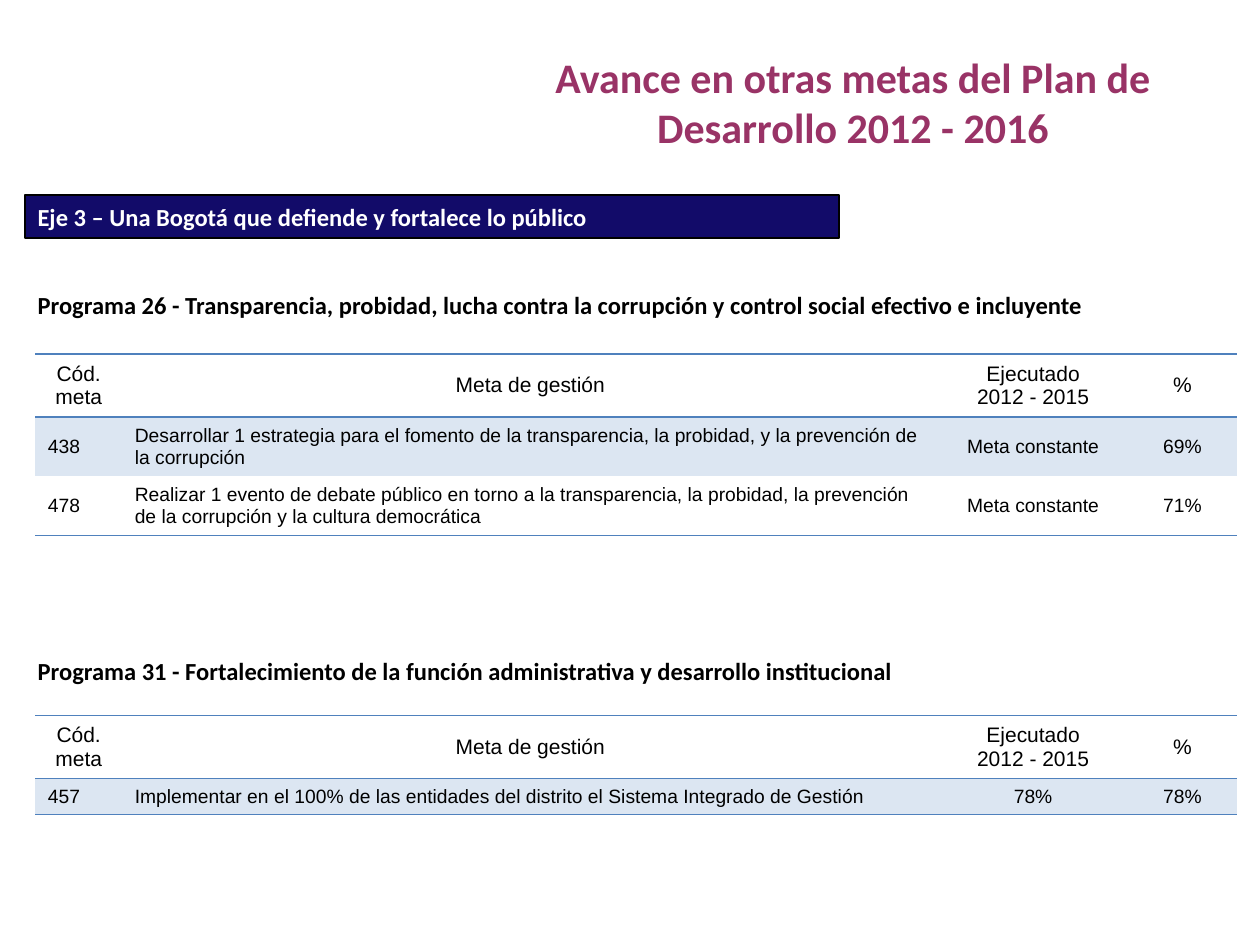
from dataclasses import dataclass
from lxml.etree import SubElement
from pptx import Presentation
from pptx.dml.color import RGBColor
from pptx.enum.shapes import MSO_SHAPE as Shape
from pptx.enum.text import MSO_ANCHOR as Anchor, PP_ALIGN as Align
from pptx.oxml.ns import qn
from pptx.slide import Slide
from pptx.util import Inches, Pt

PLUM = RGBColor(0x99, 0x33, 0x66)
NAVY = RGBColor(0x12, 0x0B, 0x69)
BLUE = RGBColor(0x4F, 0x81, 0xBD)
PALE = RGBColor(0xDC, 0xE6, 0xF2)
BLACK = RGBColor(0, 0, 0)
WHITE = RGBColor(0xFF, 0xFF, 0xFF)

PLAIN_TABLE = "{2D5ABB26-0587-4C30-8999-92F81FD0307C}"
WIDTHS = (0.69, 6.48, 1.5, 0.87)
HEADER = ("Cód. meta", "Meta de gestión", "Ejecutado\n2012 - 2015", "%")
HEADER_HEIGHT = 0.5

PROGRAMS = (
    (2.25, 9.37,
     "Programa 26 - Transparencia, probidad, lucha contra la corrupción y control social efectivo e incluyente",
     2.81, 0.47,
     (("438", "Desarrollar 1 estrategia para el fomento de la transparencia, la probidad, "
       "y la prevención de la corrupción", "Meta constante", "69%"),
      ("478", "Realizar 1 evento de debate público en torno a la transparencia, la probidad, "
       "la prevención de la corrupción y la cultura democrática", "Meta constante", "71%"))),
    (5.16, 9.21,
     "Programa 31 - Fortalecimiento de la función administrativa y desarrollo institucional",
     5.68, 0.28,
     (("457", "Implementar en el 100% de las entidades del distrito el Sistema Integrado de Gestión",
       "78%", "78%"),)),
)


@dataclass
class GoalsPage:
    """Draws the headings, banner and goal tables of one page."""

    page: Slide
    heading_font: str = "Calibri"
    table_font: str = "Arial"

    def add_lines(self, frame, text, font, size, color, bold=False, align=Align.LEFT):
        for index, line in enumerate(text.split("\n")):
            para = frame.add_paragraph() if index else frame.paragraphs[0]
            para.alignment = align
            span = para.add_run()
            span.text = line
            span.font.name = font
            span.font.size = Pt(size)
            span.font.bold = bold
            span.font.color.rgb = color

    def heading(self, text, left, top, width, height, size=14, color=BLACK, align=Align.LEFT):
        box = self.page.shapes.add_textbox(Inches(left), Inches(top), Inches(width), Inches(height))
        box.text_frame.word_wrap = True
        self.add_lines(box.text_frame, text, self.heading_font, size, color, True, align)

    def banner(self, text, left, top, width, height):
        box = self.page.shapes.add_shape(
            Shape.RECTANGLE, Inches(left), Inches(top), Inches(width), Inches(height))
        box.shadow.inherit = False
        box.fill.solid()
        box.fill.fore_color.rgb = NAVY
        box.line.color.rgb = BLACK
        box.line.width = Pt(1)
        box.text_frame.vertical_anchor = Anchor.MIDDLE
        self.add_lines(box.text_frame, text, self.heading_font, 14, WHITE, True)

    def border(self, cell, tag):
        line = SubElement(cell._tc.get_or_add_tcPr(), qn(tag), w=str(Pt(1)))
        fill = SubElement(line, qn("a:solidFill"))
        SubElement(fill, qn("a:srgbClr"), val=str(BLUE))

    def goals(self, goals, left, top, row_height):
        rows = (HEADER, *goals)
        heights = (HEADER_HEIGHT, *[row_height] * len(goals))
        table = self.page.shapes.add_table(
            len(rows), len(WIDTHS), Inches(left), Inches(top),
            Inches(sum(WIDTHS)), Inches(sum(heights))).table
        table._tbl.tblPr.find(qn("a:tableStyleId")).text = PLAIN_TABLE
        for column, width in zip(table.columns, WIDTHS):
            column.width = Inches(width)
        for r, (values, height) in enumerate(zip(rows, heights)):
            table.rows[r].height = Inches(height)
            for c, value in enumerate(values):
                cell = table.cell(r, c)
                cell.vertical_anchor = Anchor.MIDDLE
                if r == 0:
                    self.border(cell, "a:lnT")
                if r in (0, len(rows) - 1):
                    self.border(cell, "a:lnB")
                if r % 2:
                    cell.fill.solid()
                    cell.fill.fore_color.rgb = PALE
                else:
                    cell.fill.background()
                align = Align.CENTER if r == 0 or c > 1 else Align.LEFT
                self.add_lines(cell.text_frame, value, self.table_font, 11 if r else 12, BLACK, align=align)


def main():
    deck = Presentation()
    deck.slide_width, deck.slide_height = Inches(10), Inches(7.5)
    goals_page = GoalsPage(deck.slides.add_slide(deck.slide_layouts[6]))
    goals_page.banner("Eje 3 – Una Bogotá que defiende y fortalece lo público", 0.2, 1.55, 6.46, 0.34)
    for top, width, title, table_top, row_height, goals in PROGRAMS:
        goals_page.heading(title, 0.2, top, width, 0.34)
        goals_page.goals(goals, 0.28, table_top, row_height)
    goals_page.heading("Avance en otras metas del Plan de Desarrollo 2012 - 2016",
                       3.74, 0.36, 6.06, 0.91, 24, PLUM, Align.CENTER)
    deck.save("out.pptx")


if __name__ == "__main__":
    main()
